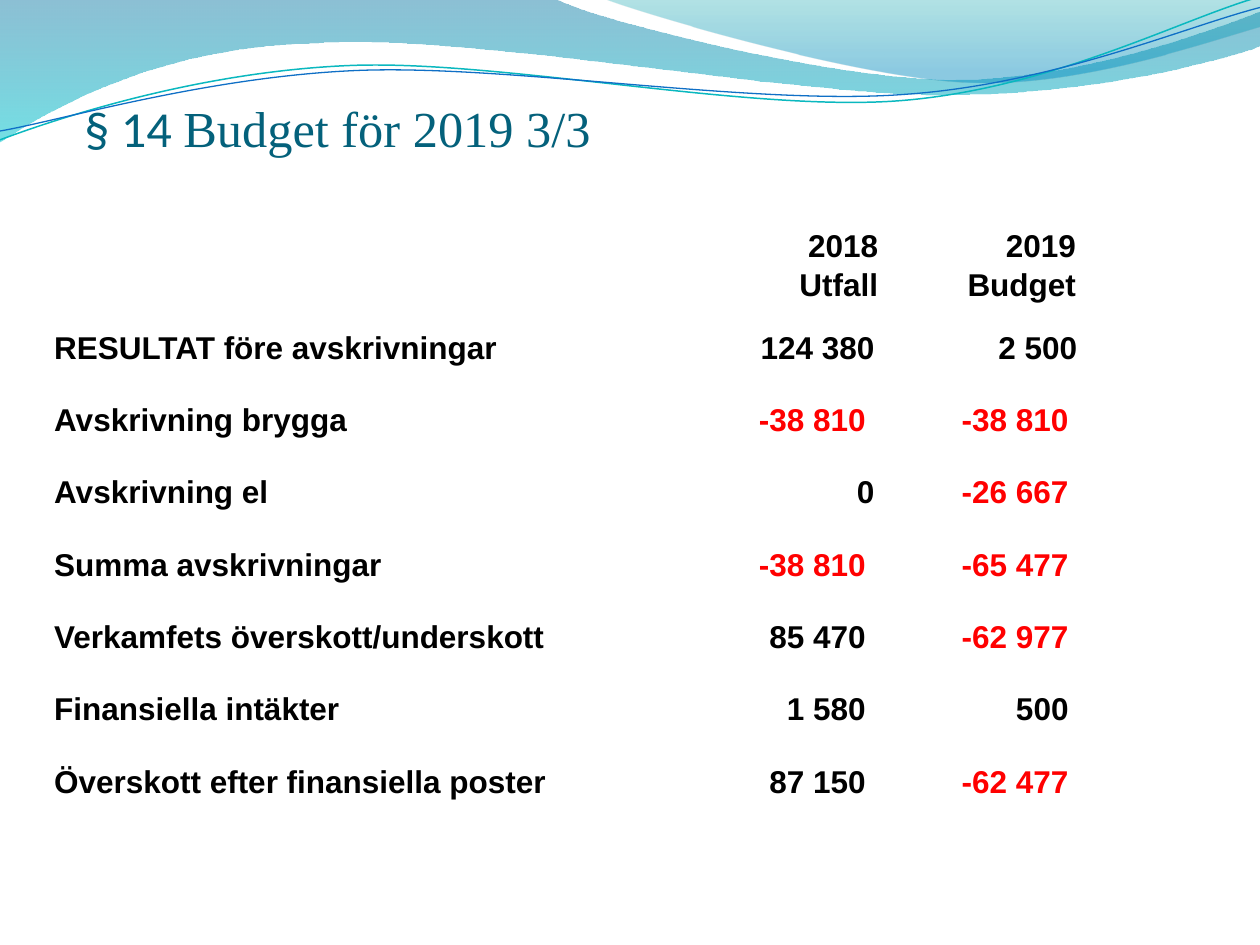
from math import cos, radians, sin

from lxml.etree import SubElement
from pptx import Presentation
from pptx.dml.color import RGBColor
from pptx.enum.text import MSO_ANCHOR, PP_ALIGN
from pptx.oxml.ns import qn
from pptx.util import Inches, Pt

COLORS = {
    "title": "04617B", "text": "000000", "negative": "FF0000",
    "wave_top": "0074A1", "wave_bottom": "00C6CF",
    "glow_top": "00A1A9", "glow_bottom": "008BBF",
    "teal": "0AB8BF", "blue": "0F6FC6",
}
# An outline is a list of segments: one point is a start or a straight line,
# three points are two Bézier controls and an end.
WAVE = [
    [(0, 0)],
    [(4.4, -0.01)],
    [(4.76, 0.17), (6.64, 0.63), (7.58, 0.63)],
    [(8.53, 0.63), (9.58, 0.26), (10, 0.09)],
    [(10.01, 0.36)],
    [(9.83, 0.44), (8.7, 0.76), (7.46, 0.75)],
    [(6.22, 0.75), (3.82, 0.28), (2.57, 0.34)],
    [(1.29, 0.36), (0.46, 0.83), (-0.01, 1.13)],
]
GLOW = [
    [(4.79, -0.01)],
    [(5.09, 0.11), (6.82, 0.62), (7.69, 0.65)],
    [(8.56, 0.69), (9.61, 0.32), (10, 0.21)],
    [(10, 0)],
]
TEAL_LINE = [
    [(0, 1.11)],
    [(0.48, 0.93), (1.58, 0.57), (2.77, 0.52)],
    [(3.95, 0.47), (5.93, 0.89), (7.13, 0.8)],
    [(8.33, 0.71), (9.38, 0.15), (9.98, -0.02)],
]
BLUE_LINE = [
    [(0, 1.04)],
    [(0.47, 0.96), (1.64, 0.61), (2.83, 0.56)],
    [(4.03, 0.51), (5.97, 0.84), (7.17, 0.75)],
    [(8.36, 0.67), (9.41, 0.21), (10, 0.06)],
]
LINE_TILT = -2.7
NO_STYLE_NO_GRID = "{2D5ABB26-0587-4C30-8999-92F81FD0307C}"

HEADINGS = [("2018", "", "2019"), ("Utfall", "", "Budget")]
BUDGET = [
    ("RESULTAT före avskrivningar", "124 380", "2 500"),
    ("Avskrivning brygga", "-38 810", "-38 810"),
    ("Avskrivning el", "0", "-26 667"),
    ("Summa avskrivningar", "-38 810", "-65 477"),
    ("Verkamfets överskott/underskott", "85 470", "-62 977"),
    ("Finansiella intäkter", "1 580", "500"),
    ("Överskott efter finansiella poster", "87 150", "-62 477"),
]
FLUSH_VALUES = {"124 380", "2 500", "0"}


def turn(point, center, degrees):
    """Turn a point clockwise around a center."""
    dx, dy = point[0] - center[0], point[1] - center[1]
    cosine, sine = cos(radians(degrees)), sin(radians(degrees))
    return center[0] + dx * cosine - dy * sine, center[1] + dx * sine + dy * cosine


class BudgetSlide:
    table_font = "Arial"
    table_size = Pt(18)
    title_size = Pt(28.8)

    def __init__(self, presentation):
        self.slide = presentation.slides.add_slide(presentation.slide_layouts[5])

    def color(self, name):
        return RGBColor.from_string(COLORS[name])

    def outline(self, segments, close):
        """Build a freeform, joining each three-point segment into one curve."""
        points = [(Inches(x), Inches(y)) for segment in segments for x, y in segment]
        builder = self.slide.shapes.build_freeform(*points[0])
        builder.add_line_segments(points[1:], close=close)
        shape = builder.convert_to_shape()
        shape.shadow.inherit = False
        lines = iter(list(shape._element.iter(qn("a:lnTo"))))
        for segment in segments[1:]:
            first, *others = [next(lines) for _ in segment]
            if others:
                curve = first.makeelement(qn("a:cubicBezTo"))
                first.addprevious(curve)
                for line in (first, *others):
                    curve.append(line[0])
                    line.getparent().remove(line)
        return shape

    def gradient_area(self, segments, stops):
        """Fill an area from top to bottom; a stop is (percent, color, opacity)."""
        shape = self.outline(segments, close=True)
        shape.line.fill.background()
        shape.fill.gradient()
        gradient = shape.fill._xPr.find(qn("a:gradFill"))
        for child in list(gradient):
            gradient.remove(child)
        stop_list = SubElement(gradient, qn("a:gsLst"))
        for percent, name, opacity in stops:
            stop = SubElement(stop_list, qn("a:gs"), pos=str(percent * 1000))
            color = SubElement(stop, qn("a:srgbClr"), val=COLORS[name])
            SubElement(color, qn("a:alpha"), val=str(opacity * 1000))
        SubElement(gradient, qn("a:lin"), ang=str(90 * 60000), scaled="0")

    def tilted_curve(self, segments, center, color, width):
        level = [[turn(point, center, -LINE_TILT) for point in segment]
                 for segment in segments]
        shape = self.outline(level, close=False)
        shape.rotation = LINE_TILT
        shape.fill.background()
        shape.line.color.rgb = self.color(color)
        shape.line.width = Pt(width)

    def title(self, parts, left, top, width, height):
        """Write the title in front of the waves; a part is (text, font)."""
        title = self.slide.shapes.title
        self.slide.shapes._spTree.append(title._element)
        title.left, title.top = Inches(left), Inches(top)
        title.width, title.height = Inches(width), Inches(height)
        frame = title.text_frame
        frame.vertical_anchor = MSO_ANCHOR.TOP
        frame.margin_left = frame.margin_right = frame.margin_bottom = 0
        frame.margin_top = Inches(0.03)
        paragraph = frame.paragraphs[0]
        paragraph.alignment = PP_ALIGN.LEFT
        for text, font in parts:
            run = paragraph.add_run()
            run.text = text
            run.font.name = font
            run.font.size = self.title_size
            run.font.color.rgb = self.color("title")

    def table(self, rows, left, top, column_widths, height, label_column=False):
        frame = self.slide.shapes.add_table(
            len(rows), len(column_widths), Inches(left), Inches(top),
            Inches(sum(column_widths)), Inches(height))
        table = frame.table
        table.first_row = table.horz_banding = False
        table._tbl.tblPr.find(qn("a:tableStyleId")).text = NO_STYLE_NO_GRID
        for column, width in zip(table.columns, column_widths):
            column.width = Inches(width)
        for row_index, values in enumerate(rows):
            for column_index, text in enumerate(values):
                is_label = label_column and column_index == 0
                cell = table.cell(row_index, column_index)
                self.cell(cell, text, PP_ALIGN.LEFT if is_label else PP_ALIGN.RIGHT)
                if label_column and not is_label and text not in FLUSH_VALUES:
                    cell.margin_right = Inches(0.07)

    def cell(self, cell, text, alignment):
        cell.fill.background()
        cell.vertical_anchor = MSO_ANCHOR.BOTTOM
        cell.margin_left = cell.margin_right = cell.margin_top = cell.margin_bottom = 0
        cell.text_frame.text = text
        paragraph = cell.text_frame.paragraphs[0]
        paragraph.alignment = alignment
        for run in paragraph.runs:
            run.font.name = self.table_font
            run.font.size = self.table_size
            run.font.bold = True
            run.font.color.rgb = self.color("negative" if text.startswith("-") else "text")
        if not text:
            paragraph.font.size = self.table_size


def main():
    presentation = Presentation()
    presentation.slide_width, presentation.slide_height = Inches(10), Inches(7.5)
    page = BudgetSlide(presentation)
    page.gradient_area(WAVE, [(0, "wave_top", 45), (100, "wave_bottom", 55)])
    page.gradient_area(GLOW, [(0, "glow_top", 30), (80, "glow_bottom", 45)])
    page.tilted_curve(TEAL_LINE, (4.99, 0.58), "teal", 0.85)
    page.tilted_curve(BLUE_LINE, (5, 0.59), "blue", 0.75)
    page.title([("§ 14 ", "Calibri"), ("Budget för 2019 3/3", "Times New Roman")],
               0.67, 0.74, 9, 0.8)
    page.table(HEADINGS, 5.71, 1.78, [1.26, 0.63, 0.94], 0.63)
    page.table(BUDGET, 0.43, 2.33, [5.41, 1.1, 1.61], 4.02, label_column=True)
    presentation.save("out.pptx")


if __name__ == "__main__":
    main()
